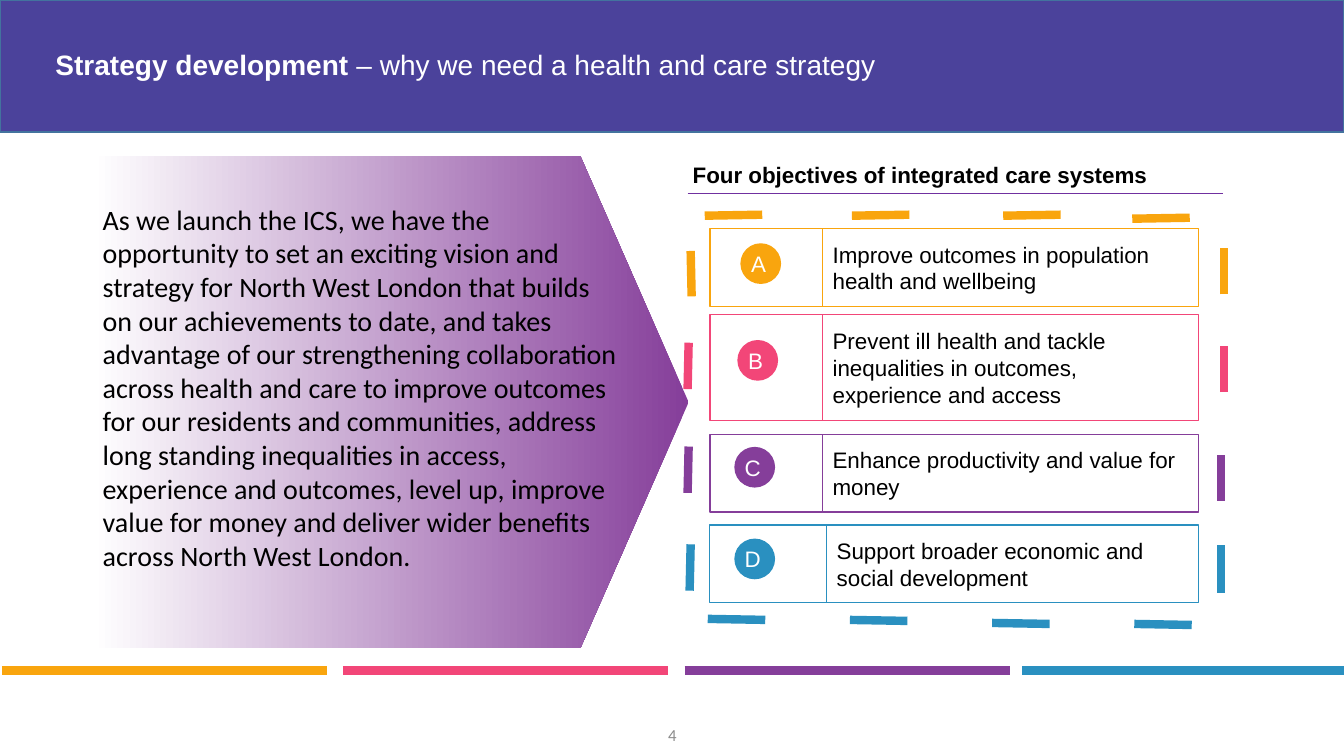
from lxml.etree import SubElement
from pptx import Presentation
from pptx.dml.color import RGBColor
from pptx.enum.shapes import MSO_CONNECTOR as Connector, MSO_SHAPE as Shape
from pptx.enum.text import MSO_ANCHOR as Anchor, PP_ALIGN as Align
from pptx.oxml import parse_xml
from pptx.oxml.ns import nsdecls, qn
from pptx.util import Inches, Pt

INDIGO = RGBColor(0x4B, 0x42, 0x9B)
BANNER_EDGE = RGBColor(0x43, 0x73, 0x9E)
AMBER = RGBColor(0xF9, 0xA5, 0x0E)
PINK = RGBColor(0xF2, 0x46, 0x78)
PURPLE = RGBColor(0x85, 0x3E, 0x9A)
BLUE = RGBColor(0x2A, 0x90, 0xC0)
WHITE = RGBColor(0xFF, 0xFF, 0xFF)
BLACK = RGBColor(0, 0, 0)
GREY = RGBColor(0x8C, 0x8C, 0x8C)

VISION = (
    "As we launch the ICS, we have the opportunity to set an exciting vision "
    "and strategy for North West London that builds on our achievements to "
    "date, and takes advantage of our strengthening collaboration across "
    "health and care to improve outcomes for our residents and communities, "
    "address long standing inequalities in access, experience and outcomes, "
    "level up, improve value for money and deliver wider benefits across "
    "North West London."
)

# letter, colour, text, top, height, divider x, badge (x, y)
OBJECTIVES = [
    ("A", AMBER, "Improve outcomes in population health and wellbeing",
     2.27, 0.77, 8.16, (7.35, 2.42)),
    ("B", PINK, "Prevent ill health and tackle inequalities in outcomes, "
     "experience and access", 3.12, 1.05, 8.16, (7.32, 3.38)),
    ("C", PURPLE, "Enhance productivity and value for money",
     4.31, 0.77, 8.16, (7.29, 4.44)),
    ("D", BLUE, "Support broader economic and social development",
     5.21, 0.77, 8.2, (7.29, 5.35)),
]
BOX_LEFT, BOX_RIGHT = 7.04, 11.89

# start and end points of the dashes around the objectives
SIDE_DASHES = [
    (AMBER, (6.86, 2.94, 6.85, 2.49), (12.14, 2.92, 12.14, 2.46)),
    (PINK, (6.82, 3.86, 6.83, 3.4), (12.14, 3.89, 12.14, 3.43)),
    (PURPLE, (6.82, 4.89, 6.83, 4.43), (12.11, 4.97, 12.11, 4.51)),
    (BLUE, (6.84, 5.86, 6.85, 5.4), (12.11, 5.88, 12.11, 5.41)),
]
DASH_LENGTH = 0.57
TOP_DASHES = [(6.99, 2.14), (8.45, 2.14), (9.95, 2.14), (11.23, 2.17)]
BOTTOM_DASHES = [(7.02, 6.14), (8.43, 6.15), (9.84, 6.18), (11.25, 6.19)]
FOOTER_STRIPES = [(AMBER, 0.02, 3.24), (PINK, 3.4, 6.63),
                  (PURPLE, 6.79, 10.02), (BLUE, 10.14, 13.37)]


def style_text(frame, text, size, color, font="Arial", align=Align.LEFT,
               anchor=Anchor.MIDDLE, bold=False):
    frame.text = text
    frame.word_wrap = True
    frame.vertical_anchor = anchor
    paragraph = frame.paragraphs[0]
    paragraph.alignment = align
    for run in paragraph.runs:
        run.font.size = Pt(size)
        run.font.name = font
        run.font.bold = bold
        run.font.color.rgb = color


def add_block(slide, kind, left, top, width, height, fill=None, line=None):
    block = slide.shapes.add_shape(
        kind, Inches(left), Inches(top), Inches(width), Inches(height))
    block.shadow.inherit = False
    if fill is None:
        block.fill.background()
    else:
        block.fill.solid()
        block.fill.fore_color.rgb = fill
    if line is None:
        block.line.fill.background()
    else:
        block.line.color.rgb = line
        block.line.width = Pt(1)
    return block


def add_stripe(slide, color, x1, y1, x2, y2):
    stripe = slide.shapes.add_connector(
        Connector.STRAIGHT, Inches(x1), Inches(y1), Inches(x2), Inches(y2))
    stripe.line.color.rgb = color
    stripe.line.width = Pt(6)
    SubElement(stripe.element.spPr, qn("a:effectLst"))


def add_title(slide):
    title = slide.shapes.title
    title.left, title.top = Inches(0.45), Inches(0.36)
    title.width, title.height = Inches(12.44), Inches(0.59)
    style_text(title.text_frame, "Strategy development", 20, WHITE, bold=True)
    paragraph = title.text_frame.paragraphs[0]
    paragraph.line_spacing = 0.9
    question = paragraph.add_run()
    question.text = " – why we need a health and care strategy"
    question.font.size = Pt(20)
    question.font.name = "Arial"
    question.font.bold = False
    question.font.color.rgb = WHITE
    # The banner lies behind the title
    banner = add_block(slide, Shape.RECTANGLE, 0, 0, 13.33, 1.31, INDIGO, BANNER_EDGE)
    title.element.addprevious(banner.element)


def add_vision(slide):
    vision = add_block(slide, Shape.PENTAGON, 0.92, 1.55, 5.91, 4.88, WHITE)
    vision.adjustments[0] = 0.22
    vision.fill.gradient()
    vision.fill.gradient_angle = 180
    for stop, color in zip(vision.fill.gradient_stops, (PURPLE, WHITE)):
        stop.color.rgb = color
    style_text(vision.text_frame, VISION, 20, BLACK, "Calibri")
    vision.text_frame.margin_bottom = Inches(0.35)


def add_objective(slide, letter, color, text, top, height, divider, badge_at):
    wording = add_block(slide, Shape.RECTANGLE, divider, top,
                        BOX_RIGHT - divider, height, line=color)
    style_text(wording.text_frame, text, 16, BLACK)
    add_block(slide, Shape.RECTANGLE, BOX_LEFT, top,
              divider - BOX_LEFT, height, line=color)
    badge = add_block(slide, Shape.OVAL, *badge_at, 0.39, 0.39, color, color)
    style_text(badge.text_frame, letter, 16, WHITE, align=Align.CENTER)
    frame = badge.text_frame
    frame.margin_left = 0
    frame.margin_right = frame.margin_top = frame.margin_bottom = Inches(0.04)


def add_heading(slide):
    table = slide.shapes.add_table(
        1, 1, Inches(6.82), Inches(1.51), Inches(5.31), Inches(0.41)).table
    table.first_row = table.horz_banding = False
    cell = table.cell(0, 0)
    cell.margin_left = cell.margin_right = Inches(0.05)
    cell.margin_top = cell.margin_bottom = Inches(0.05)
    style_text(cell.text_frame, "Four objectives of integrated care systems",
               16, BLACK, bold=True)
    cell.vertical_anchor = Anchor.BOTTOM
    cell.fill.background()
    # Only the bottom border shows; borders come before the fill
    borders = [("lnL", 0, "<a:noFill/>"), ("lnR", 0, "<a:noFill/>"),
               ("lnT", 0, "<a:noFill/>"),
               ("lnB", Pt(1), '<a:solidFill><a:srgbClr val="7030A0"/></a:solidFill>')]
    properties = cell.fill._xPr
    for position, (tag, width, paint) in enumerate(borders):
        properties.insert(position, parse_xml(
            f'<a:{tag} {nsdecls("a")} w="{width}">{paint}</a:{tag}>'))


def main():
    prs = Presentation()
    prs.slide_width, prs.slide_height = Inches(13.33), Inches(7.5)
    slide = prs.slides.add_slide(prs.slide_layouts[5])

    # Banner, footer stripes and page number
    add_title(slide)
    for color, start, end in FOOTER_STRIPES:
        add_stripe(slide, color, start, 6.65, end, 6.65)
    page_number = slide.shapes.add_textbox(
        Inches(5.17), Inches(7.09), Inches(3), Inches(0.4))
    style_text(page_number.text_frame, "4", 12, GREY, "Calibri", Align.CENTER)

    # Vision arrow
    add_vision(slide)

    # Objectives with their dashed frame
    for objective in OBJECTIVES:
        add_objective(slide, *objective)
    for color, left_dash, right_dash in SIDE_DASHES:
        add_stripe(slide, color, *left_dash)
        add_stripe(slide, color, *right_dash)
    for color, dashes, rise in ((AMBER, TOP_DASHES, -0.01), (BLUE, BOTTOM_DASHES, 0.01)):
        for x, y in dashes:
            add_stripe(slide, color, x, y, x + DASH_LENGTH, y + rise)
    add_heading(slide)

    prs.save("out.pptx")


if __name__ == "__main__":
    main()
